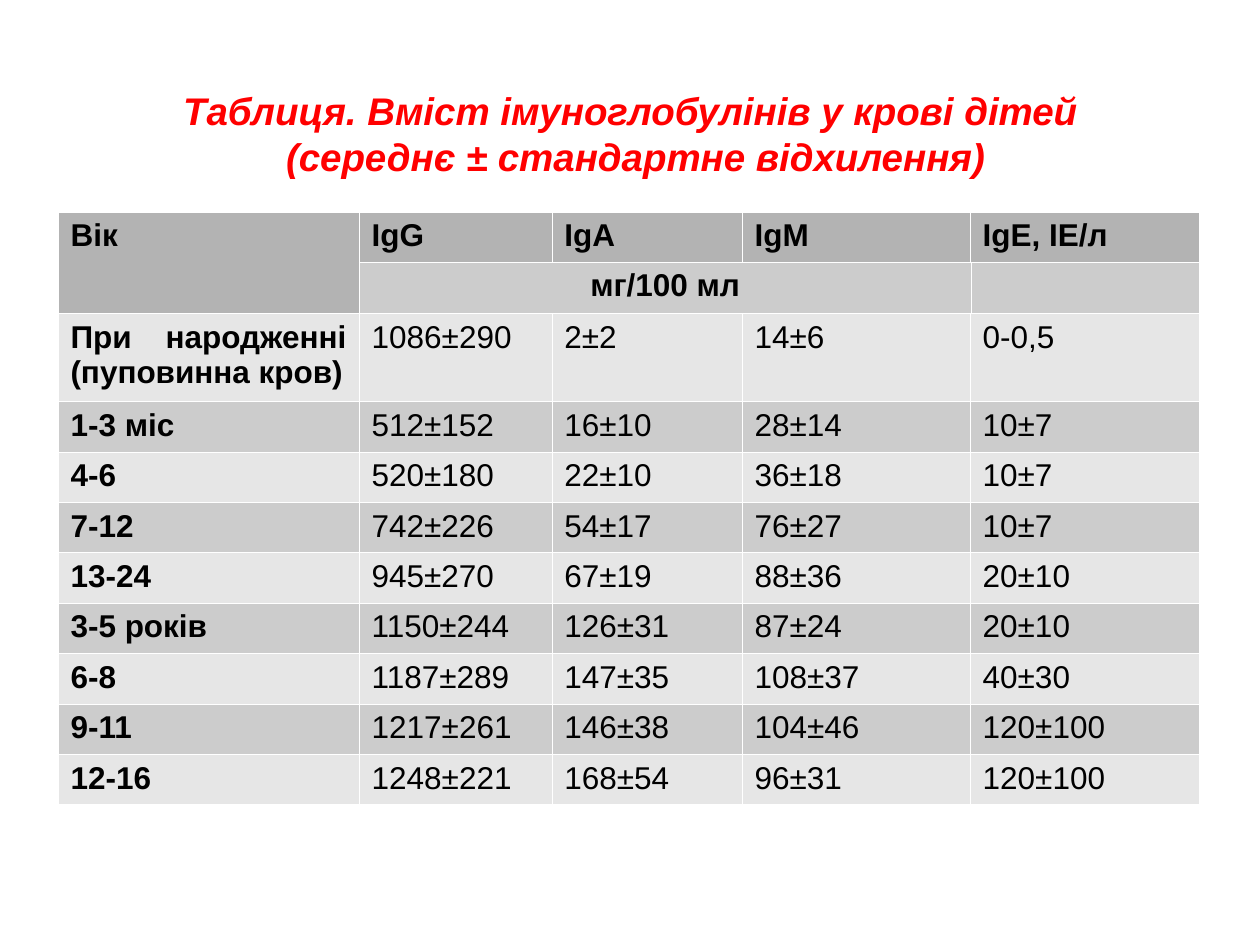
from lxml.etree import SubElement
from pptx import Presentation
from pptx.dml.color import RGBColor
from pptx.enum.text import MSO_ANCHOR, MSO_AUTO_SIZE, PP_ALIGN
from pptx.oxml.ns import qn
from pptx.util import Inches, Pt

FONT = "Arial"
TITLE_LINES = [
    "Таблиця. Вміст імуноглобулінів у крові дітей ",
    "(середнє ± стандартне відхилення)",
]
HEADINGS = ["Вік", "IgG", "IgА", "IgМ", "IgЕ, ІЕ/л"]
UNITS = ["", "мг/100 мл"]
AGE_GROUPS = [
    ["При народженні (пуповинна кров)", "1086±290", "2±2", "14±6", "0-0,5"],
    ["1-3 міс", "512±152", "16±10", "28±14", "10±7"],
    ["4-6", "520±180", "22±10", "36±18", "10±7"],
    ["7-12", "742±226", "54±17", "76±27", "10±7"],
    ["13-24", "945±270", "67±19", "88±36", "20±10"],
    ["3-5 років", "1150±244", "126±31", "87±24", "20±10"],
    ["6-8", "1187±289", "147±35", "108±37", "40±30"],
    ["9-11", "1217±261", "146±38", "104±46", "120±100"],
    ["12-16", "1248±221", "168±54", "96±31", "120±100"],
]
# The narrow fifth column ends the units cell just right of the IgM column
COLUMN_WIDTHS = [2.39, 1.53, 1.51, 1.81, 0.01, 1.81]
ROW_HEIGHT, BIRTH_ROW_HEIGHT = 0.4, 0.7
UNITS_ROW, BIRTH_ROW = 1, 2
HEADER_FILL, BAND_FILLS = "B3B3B3", ["E6E6E6", "CCCCCC"]


def color(hex_value):
    return RGBColor.from_string(hex_value)


def format_paragraph(paragraph, size, hex_value, align, bold, italic=False):
    paragraph.alignment = align
    for run in paragraph.runs:
        font = run.font
        font.name, font.size = FONT, Pt(size)
        font.bold, font.italic = bold, italic
        font.color.rgb = color(hex_value)


def add_title(slide, left, top, width, height):
    title = slide.shapes.title
    title.left, title.top = Inches(left), Inches(top)
    title.width, title.height = Inches(width), Inches(height)
    frame = title.text_frame
    frame.text = "\n".join(TITLE_LINES)
    frame.word_wrap = True
    frame.auto_size = MSO_AUTO_SIZE.NONE
    frame.vertical_anchor = MSO_ANCHOR.TOP
    for paragraph in frame.paragraphs:
        paragraph.space_before = Pt(0)
        format_paragraph(paragraph, 22, "FF0000", PP_ALIGN.CENTER, True, True)


def add_borders(cell, hex_value, width):
    properties = cell._tc.get_or_add_tcPr()
    for side in ("a:lnL", "a:lnR", "a:lnT", "a:lnB"):
        line = SubElement(properties, qn(side), w=str(Pt(width)))
        fill = SubElement(line, qn("a:solidFill"))
        SubElement(fill, qn("a:srgbClr"), val=hex_value)


def cell_align(row, column):
    if row == UNITS_ROW:
        return PP_ALIGN.CENTER
    if column == 0 and row != BIRTH_ROW:
        return PP_ALIGN.LEFT
    return PP_ALIGN.JUSTIFY


def add_immunoglobulin_table(slide, left, top, width, height):
    rows = [HEADINGS, UNITS, *AGE_GROUPS]
    table = slide.shapes.add_table(
        len(rows), len(COLUMN_WIDTHS),
        Inches(left), Inches(top), Inches(width), Inches(height)).table
    for column, column_width in zip(table.columns, COLUMN_WIDTHS):
        column.width = Inches(column_width)
    for row in table.rows:
        row.height = Inches(ROW_HEIGHT)
    table.rows[BIRTH_ROW].height = Inches(BIRTH_ROW_HEIGHT)

    # Fills, borders and cell text
    for r, texts in enumerate(rows):
        for c in range(len(COLUMN_WIDTHS)):
            cell = table.cell(r, c)
            add_borders(cell, "FFFFFF", 0.06)
            is_header = r == 0 or (r == UNITS_ROW and c == 0)
            cell.fill.solid()
            cell.fill.fore_color.rgb = color(HEADER_FILL if is_header else BAND_FILLS[r % 2])
            if c < len(texts) and texts[c]:
                cell.text_frame.text = texts[c]
                format_paragraph(cell.text_frame.paragraphs[0], 18, "000000",
                                 cell_align(r, c), r < BIRTH_ROW or c == 0)

    # Age heading spans both header rows, units span IgG to IgM
    table.cell(0, 0).merge(table.cell(UNITS_ROW, 0))
    table.cell(UNITS_ROW, 1).merge(table.cell(UNITS_ROW, 4))
    for r in range(len(rows)):
        if r != UNITS_ROW:
            table.cell(r, 4).merge(table.cell(r, 5))


def main():
    presentation = Presentation()
    presentation.slide_width, presentation.slide_height = Inches(10), Inches(7.5)
    slide = presentation.slides.add_slide(presentation.slide_layouts[5])
    add_title(slide, 1.35, 0.64, 7.39, 0.83)
    add_immunoglobulin_table(slide, 0.46, 1.68, 9.06, 4.7)
    presentation.save("out.pptx")


if __name__ == "__main__":
    main()
